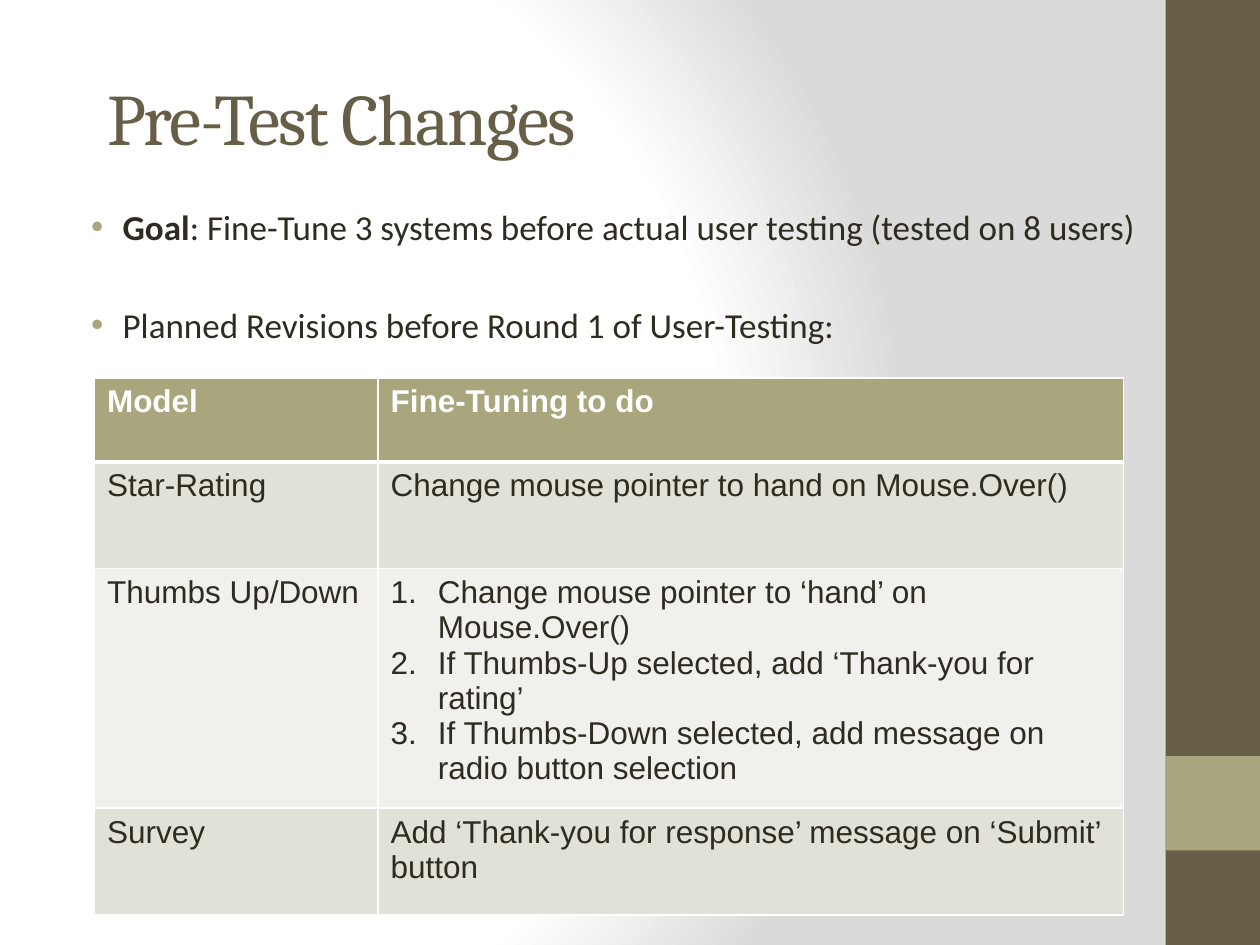
from lxml import etree
from pptx import Presentation
from pptx.dml.color import RGBColor
from pptx.enum.shapes import MSO_SHAPE as Shape
from pptx.enum.text import MSO_ANCHOR as Anchor, MSO_AUTO_SIZE as AutoSize, PP_ALIGN as Align
from pptx.oxml import parse_xml
from pptx.oxml.ns import nsdecls, qn
from pptx.util import Pt

COLORS = {"brown": "675E47", "olive": "A9A57C", "ink": "2F2B20", "white": "FFFFFF",
          "gray": "DADADA", "band": "E2E1D7", "light_band": "F1F0EC"}

TITLE = "Pre-Test Changes"
BULLETS = [
    [("Goal", True), (": Fine-Tune 3 systems before actual user testing (tested on 8 users)", False)],
    [("Planned Revisions before Round 1 of User-Testing:", False)],
]
ROWS = [
    ("Model", "Fine-Tuning to do"),
    ("Star-Rating", "Change mouse pointer to hand on Mouse.Over()"),
    ("Thumbs Up/Down", [
        "Change mouse pointer to ‘hand’ on Mouse.Over()",
        "If Thumbs-Up selected, add ‘Thank-you for rating’",
        "If Thumbs-Down selected, add message on radio button selection",
    ]),
    ("Survey", "Add ‘Thank-you for response’ message on ‘Submit’ button"),
]
COLUMN_WIDTHS = [162, 426]
ROW_HEIGHTS = [48, 61, 100, 61]
SIDEBAR = [((666, 0, 54, 540), "brown"), ((666, 432, 54, 54), "olive")]

TITLE_FONT = {"name": "Cambria", "size": Pt(41.4), "color": "brown"}
BODY_FONT = {"name": "Calibri", "size": Pt(20), "color": "ink"}
HEADER_FONT = {"name": "Arial", "size": Pt(18), "bold": True, "color": "white"}
CELL_FONT = {**HEADER_FONT, "bold": False, "color": "ink"}


def rgb(name):
    return RGBColor.from_string(COLORS[name])


def points(values):
    return [Pt(value) for value in values]


def format_font(font, values):
    for key, value in values.items():
        if key == "color":
            font.color.rgb = rgb(value)
        else:
            setattr(font, key, value)


def add_marker(paragraph, left, hanging, *markers):
    """Indent a paragraph and give it bullet or number elements."""
    properties = paragraph._p.get_or_add_pPr()
    properties.set("marL", str(Pt(left)))
    properties.set("indent", str(Pt(-hanging)))
    for marker in markers:
        properties.append(parse_xml(marker))


def set_background(slide):
    stops = "".join(f'<a:gs pos="{position * 1000}"><a:srgbClr val="{COLORS[name]}"/></a:gs>'
                    for position, name in [(0, "white"), (75, "white"), (100, "gray")])
    background = parse_xml(
        f'<p:bg {nsdecls("p", "a")}><p:bgPr><a:gradFill rotWithShape="1"><a:gsLst>{stops}</a:gsLst>'
        '<a:path path="circle"><a:fillToRect l="20000" t="50000" r="100000" b="50000"/></a:path>'
        '</a:gradFill><a:effectLst/></p:bgPr></p:bg>')
    slide.element.cSld.insert(0, background)


def add_sidebar(slide):
    for box, color in SIDEBAR:
        shape = slide.shapes.add_shape(Shape.RECTANGLE, *points(box))
        shape.shadow.inherit = False
        shape.fill.solid()
        shape.fill.fore_color.rgb = rgb(color)
        shape.line.fill.background()


def set_title(slide):
    title = slide.shapes.title
    title.left, title.top, title.width, title.height = points((54, 42, 594, 49))
    frame = title.text_frame
    frame.text = TITLE
    frame.vertical_anchor = Anchor.MIDDLE
    frame.auto_size = AutoSize.NONE
    paragraph = frame.paragraphs[0]
    paragraph.alignment = Align.LEFT
    run = paragraph.runs[0]
    format_font(run.font, TITLE_FONT)
    run.font._element.set("spc", "-100")


def add_bullets(slide):
    frame = slide.shapes.add_textbox(*points((36, 114, 644, 96))).text_frame
    frame.word_wrap = True
    for index, parts in enumerate(BULLETS):
        paragraph = frame.add_paragraph() if index else frame.paragraphs[0]
        add_marker(paragraph, 27, 18,
                   f'<a:buClr {nsdecls("a")}><a:srgbClr val="{COLORS["olive"]}"/></a:buClr>',
                   f'<a:buFont {nsdecls("a")} typeface="Arial"/>',
                   f'<a:buChar {nsdecls("a")} char="•"/>')
        if index:
            paragraph.space_before = Pt(32)
        for text, bold in parts:
            run = paragraph.add_run()
            run.text = text
            format_font(run.font, {**BODY_FONT, "bold": bold})


def set_borders(cell, widths):
    properties = cell._tc.get_or_add_tcPr()
    for side, width in widths.items():
        line = etree.SubElement(properties, qn(f"a:ln{side}"), w=str(Pt(width)))
        fill = etree.SubElement(line, qn("a:solidFill"))
        etree.SubElement(fill, qn("a:srgbClr"), val=COLORS["white"])


def fill_cell(cell, content, font, color, borders):
    set_borders(cell, borders)
    cell.fill.solid()
    cell.fill.fore_color.rgb = rgb(color)
    numbered = isinstance(content, list)
    cell.text = "\n".join(content) if numbered else content
    for paragraph in cell.text_frame.paragraphs:
        if numbered:
            add_marker(paragraph, 27, 27, f'<a:buFont {nsdecls("a")} typeface="+mj-lt"/>',
                       f'<a:buAutoNum {nsdecls("a")} type="arabicPeriod"/>')
        for run in paragraph.runs:
            format_font(run.font, font)


def add_revision_table(slide):
    box = (54, 216, sum(COLUMN_WIDTHS), sum(ROW_HEIGHTS))
    table = slide.shapes.add_table(len(ROWS), len(COLUMN_WIDTHS), *points(box)).table
    for column, width in zip(table.columns, COLUMN_WIDTHS):
        column.width = Pt(width)
    for index, (row, height) in enumerate(zip(table.rows, ROW_HEIGHTS)):
        row.height = Pt(height)
        font = CELL_FONT if index else HEADER_FONT
        color = ("light_band", "band")[index % 2] if index else "olive"
        borders = {"L": 1, "R": 1, "T": 3 if index == 1 else 1, "B": 1 if index else 3}
        for cell, content in zip(row.cells, ROWS[index]):
            fill_cell(cell, content, font, color, borders)


def main():
    presentation = Presentation()
    presentation.slide_width, presentation.slide_height = Pt(720), Pt(540)
    slide = presentation.slides.add_slide(presentation.slide_layouts[5])
    set_background(slide)
    add_sidebar(slide)
    set_title(slide)
    add_bullets(slide)
    add_revision_table(slide)
    presentation.save("out.pptx")


if __name__ == "__main__":
    main()
